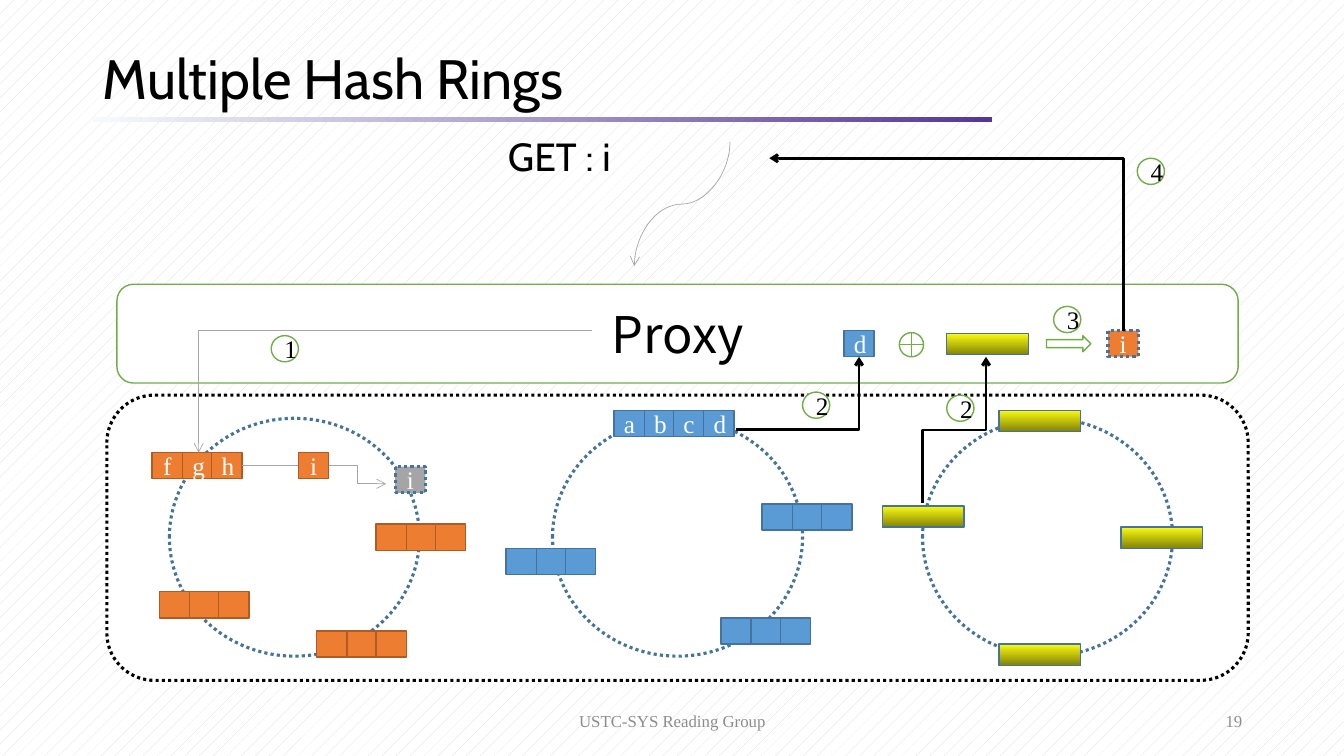
from dataclasses import dataclass

from lxml import etree
from pptx import Presentation
from pptx.dml.color import RGBColor
from pptx.enum.dml import MSO_LINE, MSO_PATTERN
from pptx.enum.shapes import MSO_CONNECTOR, MSO_SHAPE
from pptx.enum.text import MSO_ANCHOR, PP_ALIGN
from pptx.oxml.ns import qn
from pptx.shapes.autoshape import Shape
from pptx.shapes.connector import Connector
from pptx.util import Emu, Pt

RECT, ROUNDED, OVAL = MSO_SHAPE.RECTANGLE, MSO_SHAPE.ROUNDED_RECTANGLE, MSO_SHAPE.OVAL
XOR_SIGN, ARROW = MSO_SHAPE.FLOWCHART_OR, MSO_SHAPE.RIGHT_ARROW
LEFT, CENTER, RIGHT = PP_ALIGN.LEFT, PP_ALIGN.CENTER, PP_ALIGN.RIGHT
TOP, MIDDLE = MSO_ANCHOR.TOP, MSO_ANCHOR.MIDDLE
STRAIGHT, ELBOW, CURVE = MSO_CONNECTOR.STRAIGHT, MSO_CONNECTOR.ELBOW, MSO_CONNECTOR.CURVE
DOTTED = MSO_LINE.ROUND_DOT

SCALE = 9144  # EMU per px, 100 px to the inch
CELL_W, CELL_H, CELL_PITCH = 30, 26, 29.6
PARITY_W, PARITY_H = 81, 21
SERIF, HEADING, PROXY_FONT = "Times New Roman", "Cabin", "Noto Sans CJK SC"
COLORS = {
    "white": "FFFFFF", "black": "000000", "footer": "8C8C8C", "pattern": "D9D9D9",
    "blue": "5B9BD5", "blue_edge": "43739E", "orange": "ED7D31", "orange_edge": "AF5C24",
    "gray": "A5A5A5", "path": "A6A6A6", "green": "70AD47",
    "parity_light": "FBFB11", "parity_dark": "838309",
    "rule_light": "F7FAFD", "rule_dark": "543795",
}


@dataclass
class Label:
    text: str
    box: tuple[int, int, int, int]
    size: float
    font: str = SERIF
    color: str = "black"
    align: PP_ALIGN = LEFT
    anchor: MSO_ANCHOR = MIDDLE
    spacing: float = 1.0


@dataclass
class Chunk:
    left: int
    top: int
    letters: list[str]
    color: str


@dataclass
class Route:
    """Frame of a connector before it is turned."""
    kind: MSO_CONNECTOR
    box: tuple[int, int, int, int]
    preset: str
    turn: int = 0
    flipped: bool = False
    color: str = "black"
    width: float = 2


prs = Presentation()
prs.slide_width, prs.slide_height = Emu(1333 * SCALE), Emu(750 * SCALE)
slide = prs.slides.add_slide(prs.slide_layouts[6])


def px(value: float) -> Emu:
    return Emu(round(value) * SCALE)


def rgb(name: str) -> RGBColor:
    return RGBColor.from_string(COLORS[name])


def write(shape: Shape, text: str, size: float, font: str = SERIF, color: str = "black",
          align: PP_ALIGN = CENTER, anchor: MSO_ANCHOR = MIDDLE, spacing: float = 1.0) -> None:
    frame = shape.text_frame
    frame.word_wrap, frame.vertical_anchor = True, anchor
    paragraph = frame.paragraphs[0]
    paragraph.text, paragraph.alignment = text, align
    paragraph.line_spacing = spacing
    paragraph.font.size, paragraph.font.name = Pt(size), font
    paragraph.font.color.rgb = rgb(color)


def add_label(label: Label) -> None:
    box = slide.shapes.add_textbox(*map(px, label.box))
    write(box, label.text, label.size, label.font, label.color,
          label.align, label.anchor, label.spacing)


def add_block(kind: MSO_SHAPE, box: tuple[int, int, int, int], edge: str | None,
              fill: str = "white", width: float = 1, dotted: bool = False) -> Shape:
    shape = slide.shapes.add_shape(kind, *map(px, box))
    shape.shadow.inherit = False
    shape.fill.solid()
    shape.fill.fore_color.rgb = rgb(fill)
    if edge is None:
        shape.line.fill.background()
        return shape
    shape.line.color.rgb, shape.line.width = rgb(edge), Pt(width)
    if dotted:
        shape.line.dash_style = DOTTED
    return shape


def shade(shape: Shape, start: str, end: str, angle: int) -> None:
    shape.fill.gradient()
    shape.fill.gradient_angle = angle
    for stop, name in zip(shape.fill.gradient_stops, (start, end)):
        stop.color.rgb = rgb(name)


def add_parity(left: int, top: int) -> None:
    shade(add_block(RECT, (left, top, PARITY_W, PARITY_H), "blue_edge"),
          "parity_light", "parity_dark", 270)


def add_cell(left: float, top: int, letter: str, fill: str, edge: str,
             dotted: bool = False) -> Shape:
    cell = add_block(RECT, (left, top, CELL_W, CELL_H), edge, fill,
                     2.25 if dotted else 1, dotted)
    if letter:
        write(cell, letter, 18, color="white")
    return cell


def add_chunk(chunk: Chunk) -> list[Shape]:
    return [add_cell(chunk.left + i * CELL_PITCH, chunk.top, letter,
                     chunk.color, chunk.color + "_edge")
            for i, letter in enumerate(chunk.letters)]


def style_line(line: Connector, color: str, width: float, arrow: bool) -> None:
    line.line.color.rgb, line.line.width = rgb(color), Pt(width)
    properties = line._element.spPr
    if arrow:
        etree.SubElement(properties.find(qn("a:ln")), qn("a:tailEnd"), type="arrow")
    etree.SubElement(properties, qn("a:effectLst"))


def add_route(route: Route) -> None:
    left, top, width, height = route.box
    start, end = (top + height, top) if route.flipped else (top, top + height)
    line = slide.shapes.add_connector(route.kind, px(left), px(start), px(left + width), px(end))
    properties = line._element.spPr
    properties.find(qn("a:prstGeom")).set("prst", route.preset)
    if route.turn:
        properties.find(qn("a:xfrm")).set("rot", str(route.turn * 60000))
    style_line(line, route.color, route.width, True)


# Background, heading and footer
background = slide.background.fill
background.patterned()
background.pattern = MSO_PATTERN.PERCENT_5
background.fore_color.rgb, background.back_color.rgb = rgb("pattern"), rgb("white")
shade(add_block(RECT, (92, 116, 892, 5), None), "rule_light", "rule_dark", 0)
for label in (
    Label("Multiple Hash Rings", (92, 43, 1150, 75), 39.6, HEADING, spacing=0.9),
    Label("GET : i", (494, 132, 200, 60), 28, HEADING, anchor=TOP, spacing=0.9),
    Label("USTC-SYS Reading Group", (442, 695, 450, 40), 12, color="footer", align=CENTER),
    Label("19", (942, 695, 300, 40), 12, color="footer", align=RIGHT),
):
    add_label(label)

# Storage area with its three rings
add_block(ROUNDED, (106, 392, 1132, 283), "black", width=2.25, dotted=True)
for ring_left in (168, 548, 915):
    add_block(OVAL, (ring_left, 415, 248, 236), "blue_edge", width=2.25, dotted=True)
for parity_left, parity_top in ((991, 407), (1112, 523), (875, 502), (991, 639)):
    add_parity(parity_left, parity_top)

# Data chunks on the rings
EMPTY = [""] * 3
for chunk in (
    Chunk(609, 407, list("abcd"), "blue"),
    Chunk(756, 500, EMPTY, "blue"),
    Chunk(715, 613, EMPTY, "blue"),
    Chunk(502, 544, EMPTY, "blue"),
    Chunk(314, 626, EMPTY, "orange"),
    Chunk(158, 587, EMPTY, "orange"),
    Chunk(373, 520, EMPTY, "orange"),
):
    add_chunk(chunk)
found_chunk = add_chunk(Chunk(151, 449, list("fgh"), "orange"))
requested = add_cell(296, 449, "i", "orange", "orange_edge")
add_cell(392, 463, "i", "gray", "blue_edge", dotted=True)

# Proxy and the decoding of the lost item
write(add_block(ROUNDED, (116, 282, 1112, 98), "green"), "Proxy", 36, PROXY_FONT)
add_cell(837, 328, "d", "blue", "blue_edge")
add_block(XOR_SIGN, (892, 330, 24, 24), "green")
add_parity(939, 331)
add_block(ARROW, (1038, 333, 44, 16), "green")
add_cell(1099, 328, "i", "orange", "blue_edge", dotted=True)

# Paths of the request and the reply
chunk_link = slide.shapes.add_connector(STRAIGHT, 0, 0, 0, 0)
chunk_link.begin_connect(found_chunk[-1], 3)
chunk_link.end_connect(requested, 1)
style_line(chunk_link, "path", 0.5, False)
for route in (
    Route(CURVE, (615, 155, 123, 95), "curvedConnector3", 90, color="path", width=0.5),
    Route(ELBOW, (326, 462, 57, 18), "bentConnector3", color="path", width=0.5),
    Route(ELBOW, (197, 328, 390, 121), "bentConnector2", 180, True, "path", 0.5),
    Route(ELBOW, (730, 354, 122, 72), "bentConnector2", flipped=True),
    Route(ELBOW, (874, 395, 145, 63), "bentConnector3", 270),
    Route(ELBOW, (853, 67, 171, 351), "bentConnector2", 270, True),
):
    add_route(route)

# Step numbers
for step, step_left, step_top in (
    ("1", 269, 333), ("2", 939, 392), ("2", 796, 389), ("3", 1045, 304), ("4", 1128, 157),
):
    write(add_block(OVAL, (step_left, step_top, 27, 26), "green"), step, 18)

prs.save("out.pptx")
